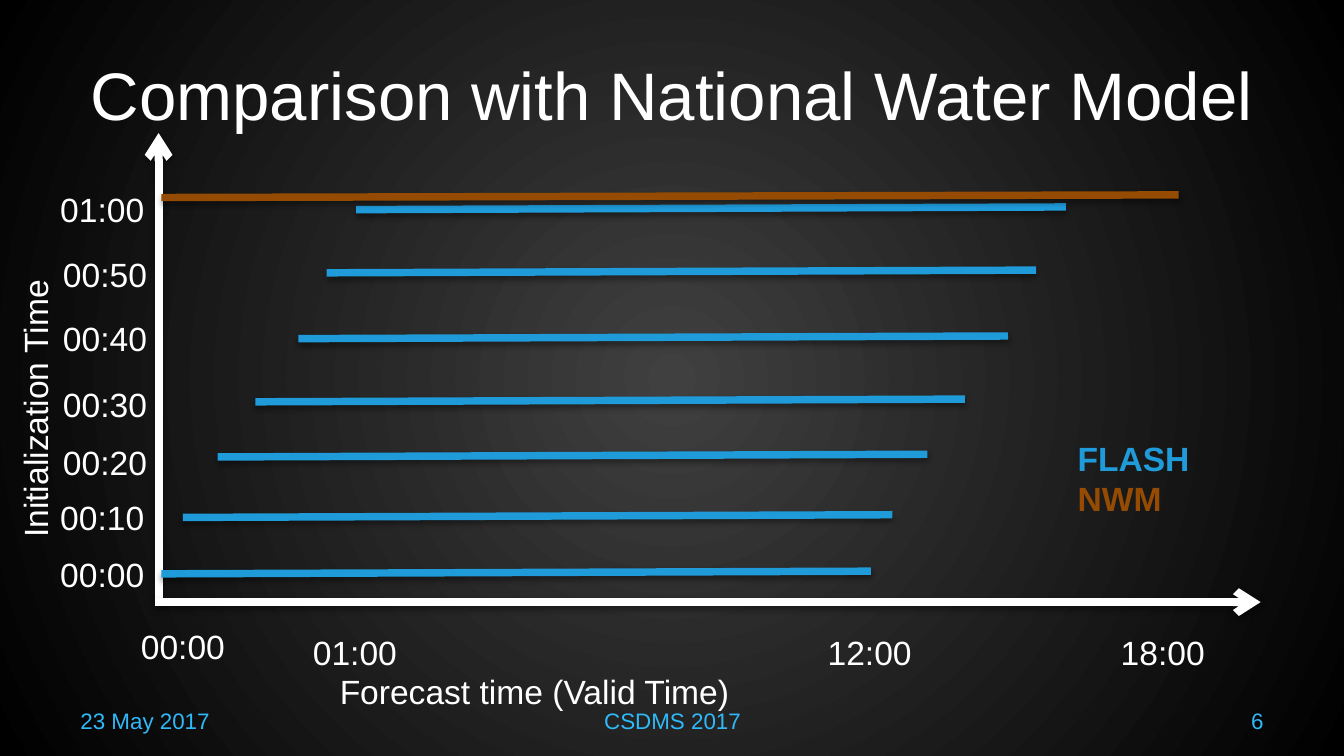
from typing import NamedTuple

from lxml.etree import SubElement
from pptx import Presentation
from pptx.dml.color import RGBColor
from pptx.enum.shapes import MSO_CONNECTOR
from pptx.enum.text import MSO_ANCHOR, PP_ALIGN
from pptx.oxml.ns import qn
from pptx.util import Inches, Pt

COLORS = {
    "text": "FFFFFF",
    "footer": "30B9F8",
    "flash": "1F9BDA",
    "nwm": "954B01",
    "glow": "404040",
    "edge": "000000",
}
FLASH_LENGTH = 5.28
LINE_RISE = 0.02


class Label(NamedTuple):
    text: str
    left: float
    top: float
    width: float = 0.83
    height: float = 0.4
    rotation: int = 0


class Footer(NamedTuple):
    text: str
    left: float
    width: float
    align: PP_ALIGN


class Line(NamedTuple):
    x1: float
    y1: float
    x2: float
    y2: float
    color: str
    width: float = 4
    arrow: bool = False


class Run(NamedTuple):
    """One forecast run: its label position and the start of its line."""
    time: str
    label_left: float
    label_top: float
    x: float
    y: float


RUNS = [
    Run("00:00", 0.35, 4.07, 1.2, 4.27),
    Run("00:10", 0.35, 3.65, 1.36, 3.85),
    Run("00:20", 0.37, 3.24, 1.62, 3.4),
    Run("00:30", 0.37, 2.81, 1.9, 2.99),
    Run("00:40", 0.37, 2.32, 2.22, 2.52),
    Run("00:50", 0.37, 1.84, 2.43, 2.03),
    Run("01:00", 0.35, 1.36, 2.65, 1.56),
]
AXES = [
    Line(1.18, 4.47, 1.18, 0.99, "text", 4.25, True),
    Line(1.15, 4.48, 9.38, 4.48, "text", 4.25, True),
]
NWM_LINE = Line(1.2, 1.47, 8.77, 1.45, "nwm")
AXIS_TITLES = [
    Label("Forecast time (Valid Time)", 2.43, 4.94, 3.13),
    Label("Initialization Time", -0.81, 2.83, 2.14, rotation=270),
]
ORIGIN_LABEL = Label("00:00", 0.95, 4.61)
VALID_TIMES = [
    Label("01:00", 2.23, 4.65),
    Label("12:00", 6.06, 4.65),
    Label("18:00", 8.24, 4.65),
]
FOOTERS = [
    Footer("23 May 2017", 0.5, 2.33, PP_ALIGN.LEFT),
    Footer("CSDMS 2017", 3.42, 3.17, PP_ALIGN.CENTER),
    Footer("6", 7.17, 2.33, PP_ALIGN.RIGHT),
]
LEGEND = [("FLASH", "flash"), ("NWM", "nwm")]


def rgb(name: str) -> RGBColor:
    return RGBColor.from_string(COLORS[name])


def add_run(p, text: str, color: str, size: float, bold: bool = False) -> None:
    r = p.add_run()
    r.text = text
    for name, value in {"name": "Arial", "size": Pt(size), "bold": bold}.items():
        setattr(r.font, name, value)
    r.font.color.rgb = rgb(color)


def add_box(s, left: float, top: float, width: float, height: float):
    return s.shapes.add_textbox(Inches(left), Inches(top), Inches(width), Inches(height))


def add_label(s, label: Label) -> None:
    sp = add_box(s, label.left, label.top, label.width, label.height)
    sp.rotation = label.rotation
    sp.text_frame.word_wrap = False
    add_run(sp.text_frame.paragraphs[0], label.text, "text", 18)


def add_footer(s, footer: Footer) -> None:
    tf = add_box(s, footer.left, 5.21, footer.width, 0.3).text_frame
    tf.word_wrap = True
    tf.vertical_anchor = MSO_ANCHOR.MIDDLE
    p = tf.paragraphs[0]
    p.alignment = footer.align
    add_run(p, footer.text, "footer", 12)


def add_line(s, line: Line) -> None:
    ends = (Inches(v) for v in (line.x1, line.y1, line.x2, line.y2))
    sp = s.shapes.add_connector(MSO_CONNECTOR.STRAIGHT, *ends)
    sp.line.color.rgb = rgb(line.color)
    sp.line.width = Pt(line.width)
    if line.arrow:
        SubElement(sp._element.spPr.find(qn("a:ln")), qn("a:tailEnd"), type="arrow")
    add_shadow(sp)


def add_shadow(sp) -> None:
    effects = SubElement(sp._element.spPr, qn("a:effectLst"))
    shadow = SubElement(effects, qn("a:outerShdw"), blurRad=str(Pt(3.1)),
                        dist=str(Pt(1.6)), dir="5400000", rotWithShape="0")
    color = SubElement(shadow, qn("a:srgbClr"), val=COLORS["edge"])
    SubElement(color, qn("a:alpha"), val="38000")


def set_background(s) -> None:
    """Fill the slide with a circular gradient from its centre."""
    fill = s.background.fill
    fill.gradient()
    for stop, position, name in zip(fill.gradient_stops, (0, 1), ("glow", "edge")):
        stop.position = position
        stop.color.rgb = rgb(name)
    grad = s._element.find(".//" + qn("a:gradFill"))
    grad.remove(grad.find(qn("a:lin")))
    circle = SubElement(grad, qn("a:path"))
    circle.set("path", "circle")
    SubElement(circle, qn("a:fillToRect"), dict.fromkeys("ltrb", "50000"))


def set_title(s, text: str) -> None:
    sp = s.shapes.title
    box = {"left": 0.5, "top": 0.23, "width": 9, "height": 0.94}
    for name, value in box.items():
        setattr(sp, name, Inches(value))
    tf = sp.text_frame
    tf.vertical_anchor = MSO_ANCHOR.MIDDLE
    p = tf.paragraphs[0]
    p.alignment = PP_ALIGN.CENTER
    add_run(p, text, "text", 36)


def add_legend(s) -> None:
    tf = add_box(s, 7.92, 3.21, 1.04, 0.71).text_frame
    tf.word_wrap = False
    for i, (text, color) in enumerate(LEGEND):
        p = tf.add_paragraph() if i else tf.paragraphs[0]
        add_run(p, text, color, 18, bold=True)


def main() -> None:
    prs = Presentation()
    prs.slide_width = Inches(10)
    prs.slide_height = Inches(10 * 9 / 16)
    s = prs.slides.add_slide(prs.slide_layouts[5])
    set_background(s)
    set_title(s, "Comparison with National Water Model")
    for footer in FOOTERS:
        add_footer(s, footer)
    for axis in AXES:
        add_line(s, axis)
    run_labels = [Label(run.time, run.label_left, run.label_top) for run in RUNS]
    for label in [*AXIS_TITLES, ORIGIN_LABEL, *run_labels, *VALID_TIMES]:
        add_label(s, label)
    for run in RUNS:
        add_line(s, Line(run.x, run.y, run.x + FLASH_LENGTH, run.y - LINE_RISE, "flash"))
    add_line(s, NWM_LINE)
    add_legend(s)
    prs.save("out.pptx")


if __name__ == "__main__":
    main()
